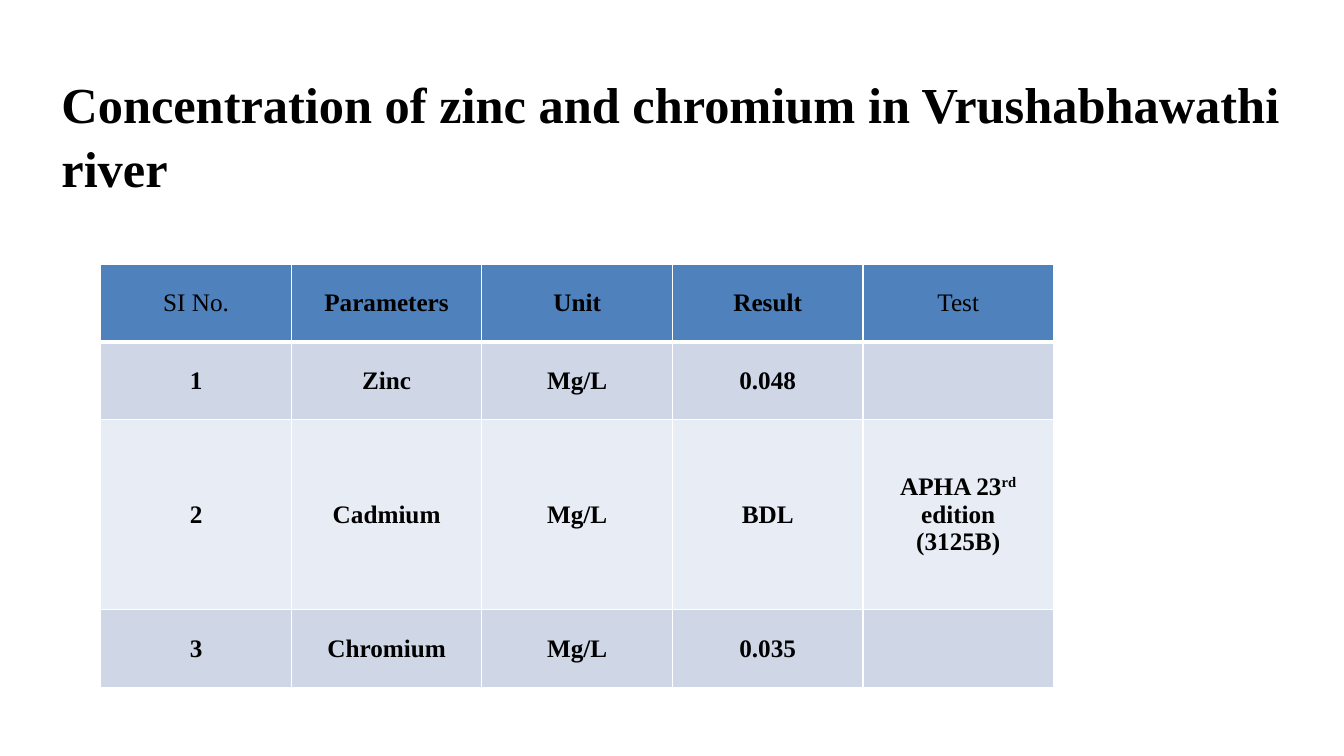
from dataclasses import dataclass

from pptx import Presentation
from pptx.dml.color import RGBColor
from pptx.enum.text import MSO_ANCHOR, PP_ALIGN
from pptx.oxml import parse_xml
from pptx.oxml.ns import nsdecls
from pptx.slide import Slide
from pptx.table import _Cell
from pptx.text.text import _Run
from pptx.util import Inches, Pt

FONT = "Times New Roman"
BLACK = RGBColor(0x00, 0x00, 0x00)
WHITE = RGBColor(0xFF, 0xFF, 0xFF)
HEADER_BLUE = RGBColor(0x4F, 0x81, 0xBD)
BAND_DARK = RGBColor(0xCF, 0xD7, 0xE7)
BAND_LIGHT = RGBColor(0xE8, 0xEC, 0xF4)

TITLE = "Concentration of zinc and chromium in Vrushabhawathi river"
COLUMN_WIDTH = 1.89
PLAIN_HEADINGS = ("SI No.", "Test")
ORDINAL = "rd"


@dataclass(frozen=True)
class TableRow:
    cells: tuple[str, ...]
    height: float
    fill: RGBColor
    top_line: int = 1
    bottom_line: int = 1


ROWS = [
    TableRow(("SI No.", "Parameters", "Unit", "Result", "Test"), 0.77, HEADER_BLUE, bottom_line=3),
    TableRow(("1", "Zinc", "Mg/L", "0.048", ""), 0.77, BAND_DARK, top_line=3),
    TableRow(("2", "Cadmium", "Mg/L", "BDL", ""), 1.89, BAND_LIGHT),
    TableRow(("3", "Chromium", "Mg/L", "0.035", ""), 0.77, BAND_DARK),
]
TEST_METHOD = (("APHA 23", ORDINAL, " edition"), ("(3125B)",))


def style_run(span: _Run, size: int, bold: bool = True) -> None:
    span.font.name = FONT
    span.font.size = Pt(size)
    span.font.bold = bold
    span.font.color.rgb = BLACK


def add_borders(cell: _Cell, top: int, bottom: int) -> None:
    properties = cell._tc.get_or_add_tcPr()
    for side, width in (("L", 1), ("R", 1), ("T", top), ("B", bottom)):
        properties.append(parse_xml(
            f'<a:ln{side} {nsdecls("a")} w="{Pt(width)}"><a:solidFill>'
            f'<a:srgbClr val="{WHITE}"/></a:solidFill></a:ln{side}>'))


def style_cell(cell: _Cell, row: TableRow) -> None:
    add_borders(cell, row.top_line, row.bottom_line)
    cell.fill.solid()
    cell.fill.fore_color.rgb = row.fill
    cell.vertical_anchor = MSO_ANCHOR.MIDDLE
    for para in cell.text_frame.paragraphs:
        para.alignment = PP_ALIGN.CENTER
        para.font.size = Pt(18)
        for span in para.runs:
            style_run(span, 18, bold=span.text not in PLAIN_HEADINGS)
            if span.text == ORDINAL:
                span._r.get_or_add_rPr().set("baseline", "30000")


def write_test_method(cell: _Cell) -> None:
    frame = cell.text_frame
    for index, pieces in enumerate(TEST_METHOD):
        para = frame.add_paragraph() if index else frame.paragraphs[0]
        for piece in pieces:
            para.add_run().text = piece


def add_title(page: Slide) -> None:
    box = page.shapes.add_textbox(Inches(0.61), Inches(0.7), Inches(12.1), Inches(1.21))
    frame = box.text_frame
    frame.word_wrap = True
    frame.margin_left = frame.margin_right = frame.margin_top = frame.margin_bottom = 0
    frame.text = TITLE
    para = frame.paragraphs[0]
    para.line_spacing = 1.05
    style_run(para.runs[0], 36)


def add_results_table(page: Slide) -> None:
    columns = len(ROWS[0].cells)
    table = page.shapes.add_table(
        len(ROWS), columns, Inches(1), Inches(2.62),
        Inches(COLUMN_WIDTH * columns), Inches(sum(row.height for row in ROWS))).table
    for column in table.columns:
        column.width = Inches(COLUMN_WIDTH)
    for index, row in enumerate(ROWS):
        table.rows[index].height = Inches(row.height)
        for cell, text in zip(table.rows[index].cells, row.cells):
            cell.text_frame.text = text
    write_test_method(table.cell(2, 4))
    for index, row in enumerate(ROWS):
        for cell in table.rows[index].cells:
            style_cell(cell, row)


def main() -> None:
    deck = Presentation()
    deck.slide_width = Inches(13.33)
    deck.slide_height = Inches(7.5)
    page = deck.slides.add_slide(deck.slide_layouts[6])
    add_title(page)
    add_results_table(page)
    deck.save("out.pptx")


if __name__ == "__main__":
    main()
